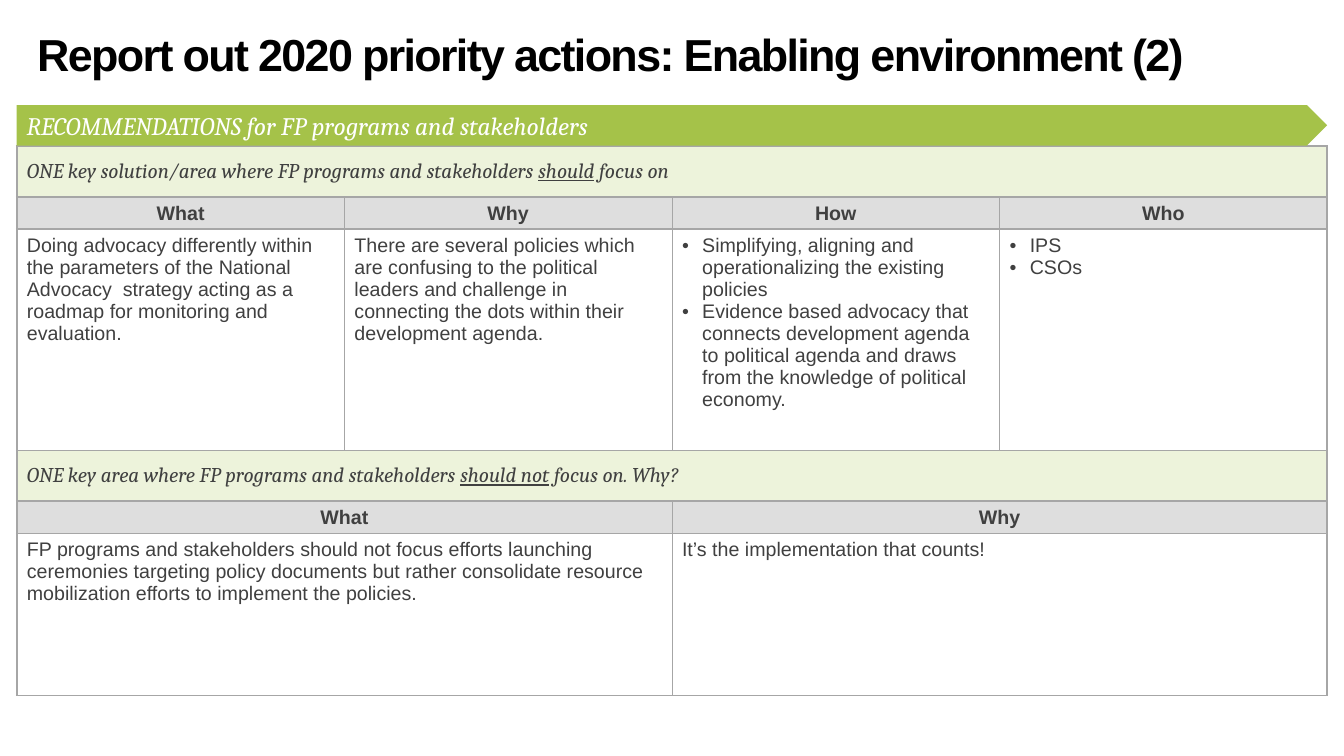
from lxml.etree import SubElement
from pptx import Presentation
from pptx.dml.color import RGBColor
from pptx.enum.shapes import MSO_SHAPE
from pptx.enum.text import MSO_ANCHOR, PP_ALIGN
from pptx.oxml.ns import qn
from pptx.util import Pt

COLORS = {"black": "000000", "white": "FFFFFF", "text": "404040", "green": "A5C249",
          "band": "EDF3DB", "header": "DEDEDE", "border": "A6A6A6"}
TITLE = {"name": "Arial", "size": Pt(32), "bold": True, "italic": False}
BANNER = {"name": "Cambria", "size": Pt(18), "bold": False, "italic": True}
STYLES = {
    "band": {"name": "Cambria", "size": Pt(15), "bold": False, "italic": True},
    "header": {"name": "Arial", "size": Pt(14), "bold": True, "italic": False},
    "body": {"name": "Arial", "size": Pt(14), "bold": False, "italic": False},
}
COLUMNS = 4
ROW_HEIGHTS = [36.4, 22.9, 158, 36.4, 22.9, 115.5]
HORIZONTAL_LINES = [1.5, 1.5, 1.5, 0.75, 1.5, 1.5, 0.75]
VERTICAL_LINES = [1.5, 0.75, 0.75, 0.75, 1.5]
ROWS = [
    ("band", ["ONE key solution/area where FP programs and stakeholders |should| focus on"]),
    ("header", ["What", "Why", "How", "Who"]),
    ("body", [
        "Doing advocacy differently within the parameters of the National Advocacy  strategy "
        "acting as a roadmap for monitoring and evaluation.",
        "There are several policies which are confusing to the political leaders and challenge "
        "in connecting the dots within their development agenda.",
        ["Simplifying, aligning and operationalizing the existing policies",
         "Evidence based advocacy that connects development agenda to political agenda "
         "and draws from the knowledge of political economy."],
        ["IPS", "CSOs"],
    ]),
    ("band", ["ONE key area where FP programs and stakeholders |should not| focus on. Why?"]),
    ("header", ["What", "Why"]),
    ("body", [
        "FP programs and stakeholders should not focus efforts launching ceremonies targeting "
        "policy documents but rather consolidate resource mobilization efforts to implement "
        "the policies.",
        "It’s the implementation that counts!",
    ]),
]


def rgb(color):
    """Return the named colour."""
    return RGBColor.from_string(COLORS[color])


def add_span(para, text, style, color):
    """Add a formatted run to a paragraph."""
    span = para.add_run()
    span.text = text
    for name, value in style.items():
        setattr(span.font, name, value)
    span.font.color.rgb = rgb(color)
    return span


def set_bullet(para):
    """Give a paragraph a bullet and a hanging indent."""
    properties = para._p.get_or_add_pPr()
    properties.set("marL", str(Pt(14.4)))
    properties.set("indent", str(-Pt(14.4)))
    SubElement(properties, qn("a:buFont"), typeface="Arial")
    SubElement(properties, qn("a:buChar"), char="•")


def set_borders(cell, widths):
    """Draw the borders of a cell, given as side and width."""
    properties = cell._tc.get_or_add_tcPr()
    for side, width in widths.items():
        line = SubElement(properties, qn(f"a:ln{side}"), w=str(Pt(width)))
        fill = SubElement(line, qn("a:solidFill"))
        SubElement(fill, qn("a:srgbClr"), val=COLORS["border"])


def fill_cell(cell, kind, content):
    """Write and format the content of a cell."""
    if kind == "body":
        cell.fill.background()
    else:
        cell.fill.solid()
        cell.fill.fore_color.rgb = rgb(kind)
    cell.vertical_anchor = MSO_ANCHOR.TOP if kind == "body" else MSO_ANCHOR.MIDDLE
    bulleted = isinstance(content, list)
    for index, text in enumerate(content if bulleted else [content]):
        frame = cell.text_frame
        para = frame.add_paragraph() if index else frame.paragraphs[0]
        para.alignment = PP_ALIGN.CENTER if kind == "header" else PP_ALIGN.LEFT
        if bulleted:
            set_bullet(para)
        for part, words in enumerate(text.split("|")):
            add_span(para, words, STYLES[kind], "text").font.underline = part % 2 == 1


def add_title(page, left, top, width, height):
    """Place the title in its box."""
    title = page.shapes.title
    box = {"left": left, "top": top, "width": width, "height": height}
    for name, value in box.items():
        setattr(title, name, Pt(value))
    title.text_frame.word_wrap = True
    title.text_frame.vertical_anchor = MSO_ANCHOR.MIDDLE
    para = title.text_frame.paragraphs[0]
    para.alignment = PP_ALIGN.LEFT
    para.line_spacing = 0.9
    span = add_span(para, "Report out 2020 priority actions: Enabling environment (2)",
                    TITLE, "black")
    span.font._element.set("spc", "-120")


def add_recommendations(page, left, top, width):
    """Place the table of recommendations in its box."""
    table = page.shapes.add_table(len(ROWS), COLUMNS, Pt(left), Pt(top), Pt(width),
                                  Pt(sum(ROW_HEIGHTS))).table
    table.first_row = table.horz_banding = False
    for column in table.columns:
        column.width = Pt(width / COLUMNS)
    for row, (kind, contents) in enumerate(ROWS):
        table.rows[row].height = Pt(ROW_HEIGHTS[row])
        step = COLUMNS // len(contents)
        for index, content in enumerate(contents):
            first, end = index * step, (index + 1) * step
            cell = table.cell(row, first)
            if step > 1:
                cell.merge(table.cell(row, end - 1))
            set_borders(cell, {"L": VERTICAL_LINES[first], "R": VERTICAL_LINES[end],
                               "T": HORIZONTAL_LINES[row], "B": HORIZONTAL_LINES[row + 1]})
            fill_cell(cell, kind, content)


def add_banner(page, left, top, width, height):
    """Place the arrow-shaped heading in its box."""
    banner = page.shapes.add_shape(MSO_SHAPE.PENTAGON, Pt(left), Pt(top), Pt(width), Pt(height))
    banner.shadow.inherit = False
    banner.fill.solid()
    banner.fill.fore_color.rgb = rgb("green")
    banner.line.fill.background()
    banner.text_frame.word_wrap = True
    banner.text_frame.vertical_anchor = MSO_ANCHOR.MIDDLE
    para = banner.text_frame.paragraphs[0]
    para.alignment = PP_ALIGN.LEFT
    add_span(para, "RECOMMENDATIONS for FP programs and stakeholders", BANNER, "white")


def main():
    """Build and save the deck."""
    deck = Presentation()
    deck.slide_width, deck.slide_height = Pt(960), Pt(540)
    page = deck.slides.add_slide(deck.slide_layouts[5])
    add_title(page, 19.4, 17.3, 921.6, 46.8)
    add_recommendations(page, 12, 104.4, 936)
    add_banner(page, 12, 75, 936, 29)
    deck.save("out.pptx")


if __name__ == "__main__":
    main()
